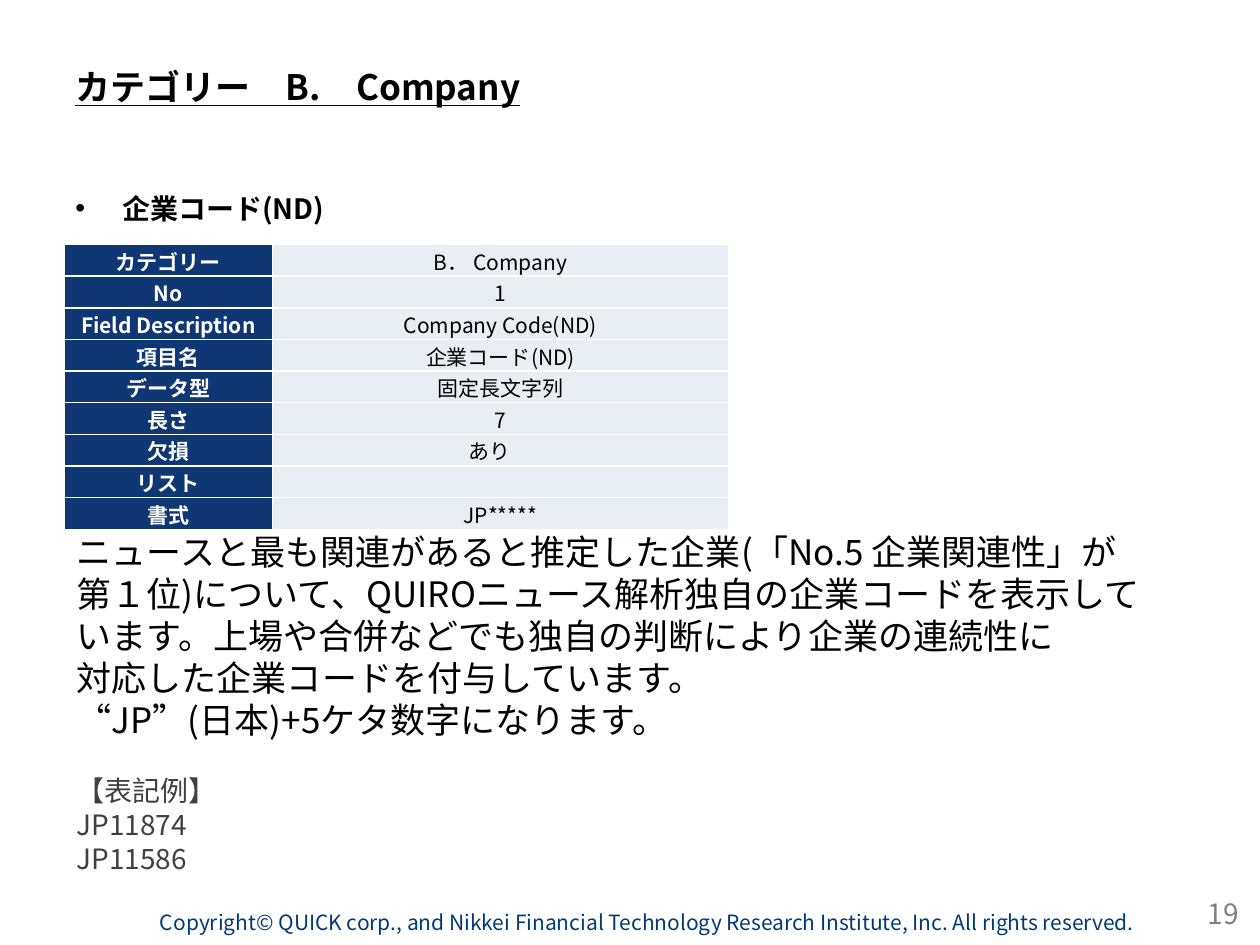
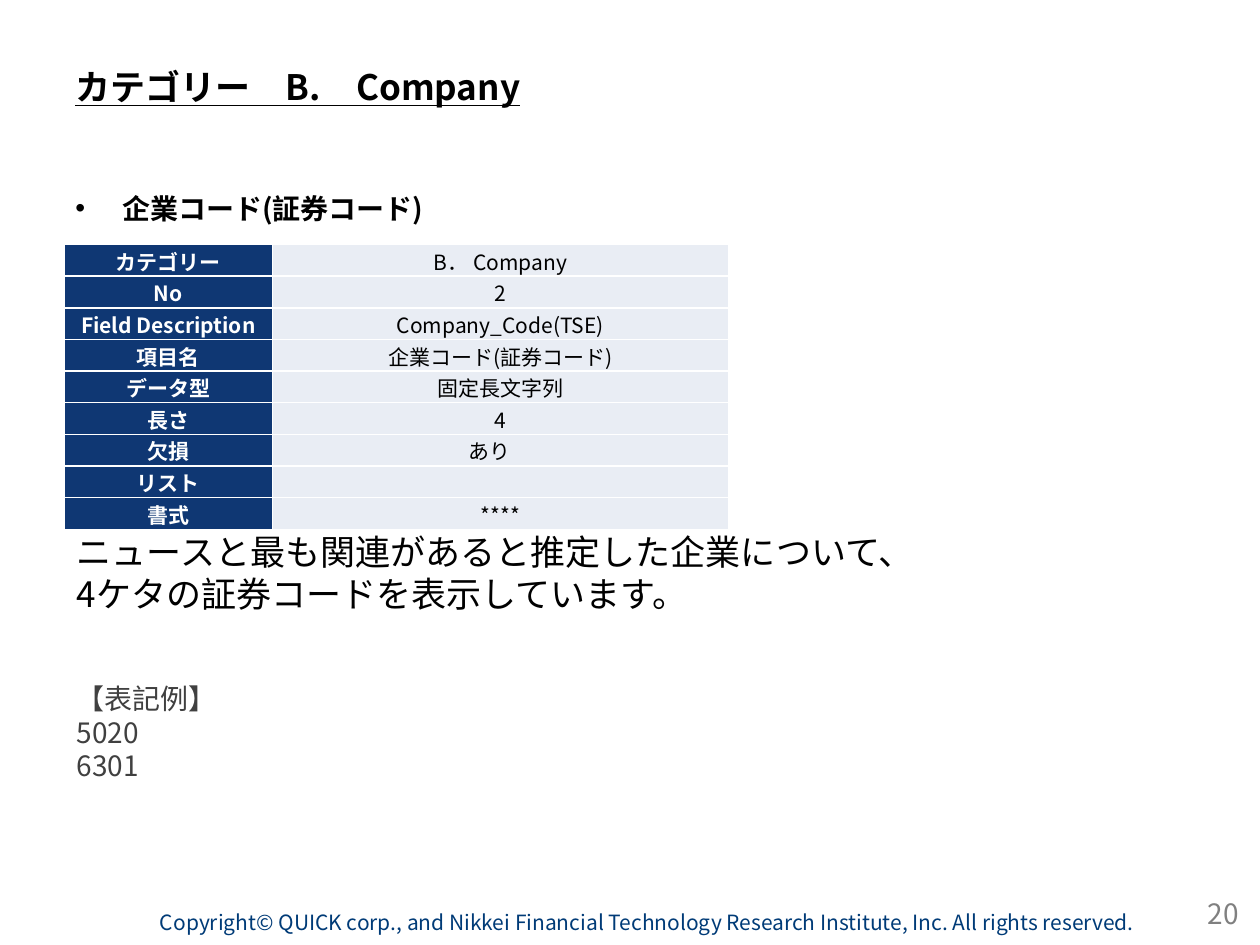
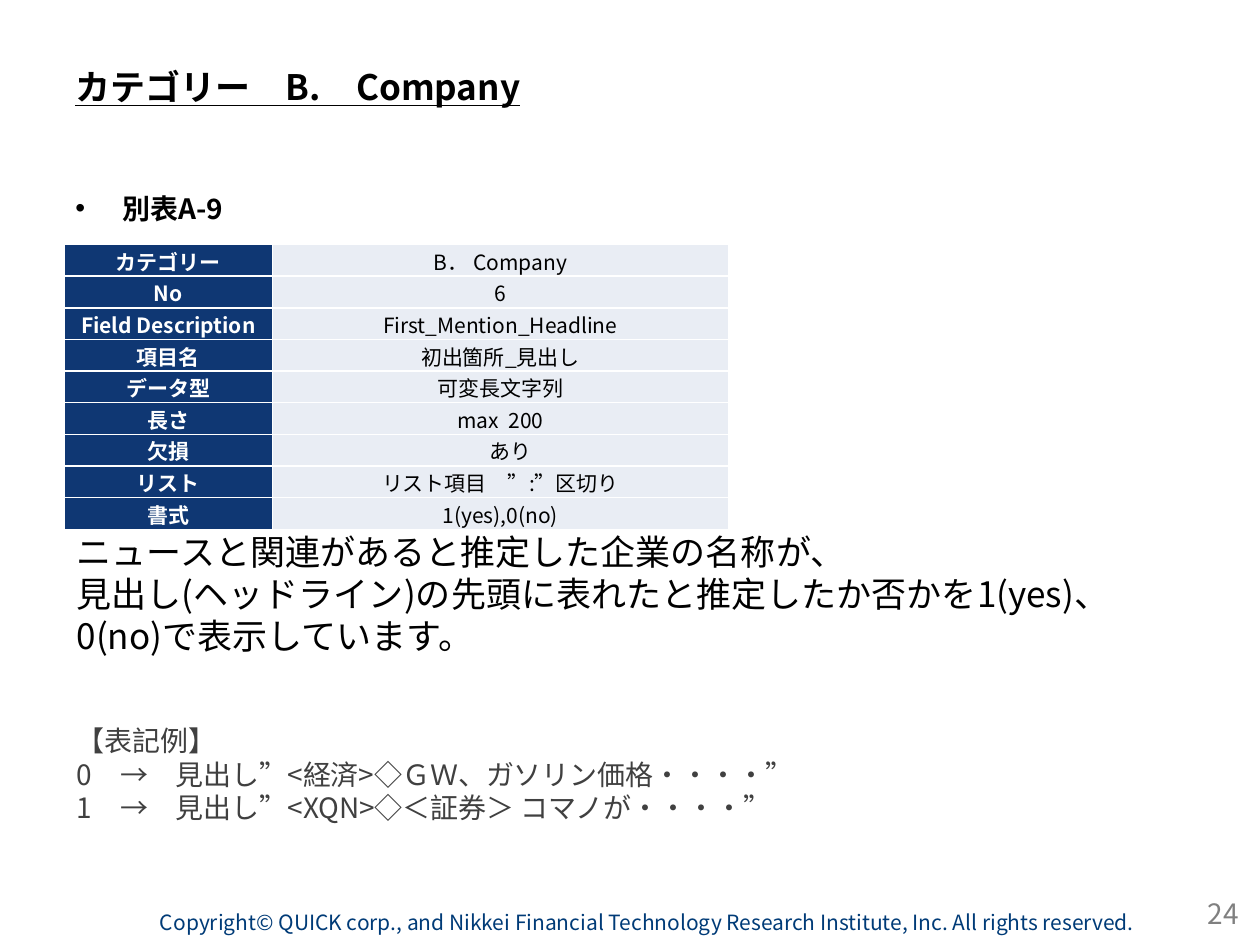
from lxml.etree import SubElement
from pptx import Presentation
from pptx.dml.color import RGBColor
from pptx.enum.shapes import MSO_SHAPE as Preset
from pptx.enum.text import MSO_ANCHOR as Anchor, MSO_AUTO_SIZE as AutoSize, PP_ALIGN as Align
from pptx.oxml.ns import qn
from pptx.util import Pt

FONT = "Noto Sans CJK JP"
COLORS = {
    "white": "FFFFFF",
    "black": "000000",
    "navy": "0F3773",
    "pale": "E9EDF4",
    "example": "404040",
    "number": "808080",
    "copyright": "003B77",
}
TITLE = "カテゴリー　B.　Company"
COPYRIGHT = "Copyright© QUICK corp., and Nikkei Financial Technology Research Institute, Inc. All rights reserved."
EXAMPLE_HEADING = "【表記例】"
FIELD_LABELS = ["カテゴリー", "No", "Field Description", "項目名", "データ型", "長さ", "欠損", "リスト", "書式"]
CATEGORY = "B． Company"

PAGES = [
    {
        "number": "19",
        "heading": "企業コード(ND)",
        "values": ["1", "Company Code(ND)", "企業コード(ND)", "固定長文字列", "7", "あり　", "", "JP*****"],
        "description": [
            "ニュースと最も関連があると推定した企業(「No.5 企業関連性」が",
            "第１位)について、QUIROニュース解析独自の企業コードを表示して",
            "います。上場や合併などでも独自の判断により企業の連続性に",
            "対応した企業コードを付与しています。",
            "“JP”(日本)+5ケタ数字になります。",
        ],
        "gap": 19.2,
        "examples": ["JP11874", "JP11586"],
    },
    {
        "number": "20",
        "heading": "企業コード(証券コード)",
        "values": ["2", "Company_Code(TSE)", "企業コード(証券コード)", "固定長文字列", "4", "あり　", "", "****"],
        "description": [
            "ニュースと最も関連があると推定した企業について、",
            "4ケタの証券コードを表示しています。",
        ],
        "gap": 38.4,
        "examples": ["5020", "6301"],
    },
    {
        "number": "24",
        "heading": "別表A-9",
        "values": ["6", "First_Mention_Headline", "初出箇所_見出し", "可変長文字列", "max  200", "　あり",
                   "リスト項目　”:”区切り", "1(yes),0(no)"],
        "description": [
            "ニュースと関連があると推定した企業の名称が、",
            "見出し(ヘッドライン)の先頭に表れたと推定したか否かを1(yes)、0(no)で表示しています。",
        ],
        "gap": 38.4,
        "examples": [
            "0　→　見出し”<経済>◇ＧＷ、ガソリン価格・・・・”",
            "1　→　見出し”<XQN>◇＜証券＞ コマノが・・・・”",
        ],
    },
]

STYLES = {
    "title": {"size": Pt(20), "bold": True, "underline": True},
    "heading": {"size": Pt(16), "bold": True},
    "label": {"size": Pt(12), "bold": True},
    "value": {"size": Pt(12), "bold": False},
    "description": {"size": Pt(20)},
    "example": {"size": Pt(16)},
    "number": {"size": Pt(16)},
    "copyright": {"size": Pt(12)},
}
COLUMN_WIDTHS = (119, 260.5)
ROW_HEIGHT = 18.1
BOXES = {
    "title": (36, 21.6, 648, 55.44),
    "heading": (36, 105.84, 648, 385.2),
    "table": (36.72, 139.68, sum(COLUMN_WIDTHS), ROW_HEIGHT * len(FIELD_LABELS)),
    "description": (36.72, 299.52, 646.56, 205.92),
    "number": (547.2, 507.6, 167.76, 28.8),
    "copyright": (91.44, 519.84, 565.92, 14.4),
}


def place(part):
    return [Pt(length) for length in BOXES[part]]


def rgb(color):
    return RGBColor.from_string(COLORS[color])


def write(paragraph, text, style, color="black"):
    run = paragraph.add_run()
    run.text = text
    font = run.font
    for name, value in {"name": FONT, **STYLES[style]}.items():
        setattr(font, name, value)
    font.color.rgb = rgb(color)
    for script in ("a:ea", "a:cs"):
        SubElement(font._element, qn(script), typeface=FONT)


def add_text(slide, part, anchor=Anchor.TOP):
    frame = slide.shapes.add_textbox(*place(part)).text_frame
    frame.word_wrap = True
    frame.vertical_anchor = anchor
    return frame


def add_copyright(slide):
    band = slide.shapes.add_shape(Preset.RECTANGLE, *place("copyright"))
    band.shadow.inherit = False
    band.fill.solid()
    band.fill.fore_color.rgb = rgb("white")
    band.line.fill.background()
    frame = band.text_frame
    frame.word_wrap = False
    frame.auto_size = AutoSize.SHAPE_TO_FIT_TEXT
    frame.vertical_anchor = Anchor.TOP
    for side in ("left", "top", "right", "bottom"):
        setattr(frame, f"margin_{side}", 0)
    frame.paragraphs[0].alignment = Align.LEFT
    write(frame.paragraphs[0], COPYRIGHT, "copyright", "copyright")


def add_heading(slide, heading):
    paragraph = add_text(slide, "heading").paragraphs[0]
    properties = paragraph._p.get_or_add_pPr()
    properties.set("marL", str(Pt(27)))
    properties.set("indent", str(Pt(-27)))
    SubElement(properties, qn("a:buFont"), typeface="Arial")
    SubElement(properties, qn("a:buChar"), char="•")
    write(paragraph, heading, "heading")


def fill_cell(cell, text, style, color, background):
    cell.fill.solid()
    cell.fill.fore_color.rgb = rgb(background)
    cell.vertical_anchor = Anchor.MIDDLE
    for side, margin in {"left": 0.72, "top": 0.72, "right": 0.72, "bottom": 0}.items():
        setattr(cell, f"margin_{side}", Pt(margin))
    paragraph = cell.text_frame.paragraphs[0]
    paragraph.alignment = Align.CENTER
    if text:
        write(paragraph, text, style, color)
    else:
        paragraph.font.size = STYLES[style]["size"]
    properties = cell._tc.get_or_add_tcPr()
    for index, edge in enumerate(("a:lnL", "a:lnR", "a:lnT", "a:lnB")):
        border = properties.makeelement(qn(edge), {"w": str(Pt(1))})
        SubElement(SubElement(border, qn("a:solidFill")), qn("a:srgbClr"), val=COLORS["white"])
        properties.insert(index, border)


def add_field_table(slide, values):
    table = slide.shapes.add_table(len(FIELD_LABELS), len(COLUMN_WIDTHS), *place("table")).table
    for column, width in zip(table.columns, COLUMN_WIDTHS):
        column.width = Pt(width)
    for row, label, value in zip(table.rows, FIELD_LABELS, [CATEGORY, *values]):
        row.height = Pt(ROW_HEIGHT)
        fill_cell(row.cells[0], label, "label", "white", "navy")
        fill_cell(row.cells[1], value, "value", "black", "pale")


def add_description(slide, page):
    frame = add_text(slide, "description")
    lines = [(text, "description", "black") for text in page["description"]]
    lines += [(text, "example", "example") for text in [EXAMPLE_HEADING, *page["examples"]]]
    for index, line in enumerate(lines):
        paragraph = frame.add_paragraph() if index else frame.paragraphs[0]
        if line[0] == EXAMPLE_HEADING:
            paragraph.space_before = Pt(page["gap"])
        write(paragraph, *line)


def add_page(deck, page):
    slide = deck.slides.add_slide(deck.slide_layouts[6])
    add_copyright(slide)
    write(add_text(slide, "title", Anchor.MIDDLE).paragraphs[0], TITLE, "title")
    add_heading(slide, page["heading"])
    add_field_table(slide, page["values"])
    number = add_text(slide, "number", Anchor.MIDDLE).paragraphs[0]
    number.alignment = Align.RIGHT
    write(number, page["number"], "number", "number")
    add_description(slide, page)


def main():
    deck = Presentation()
    deck.slide_width, deck.slide_height = Pt(720), Pt(540)
    for page in PAGES:
        add_page(deck, page)
    deck.save("out.pptx")


if __name__ == "__main__":
    main()
